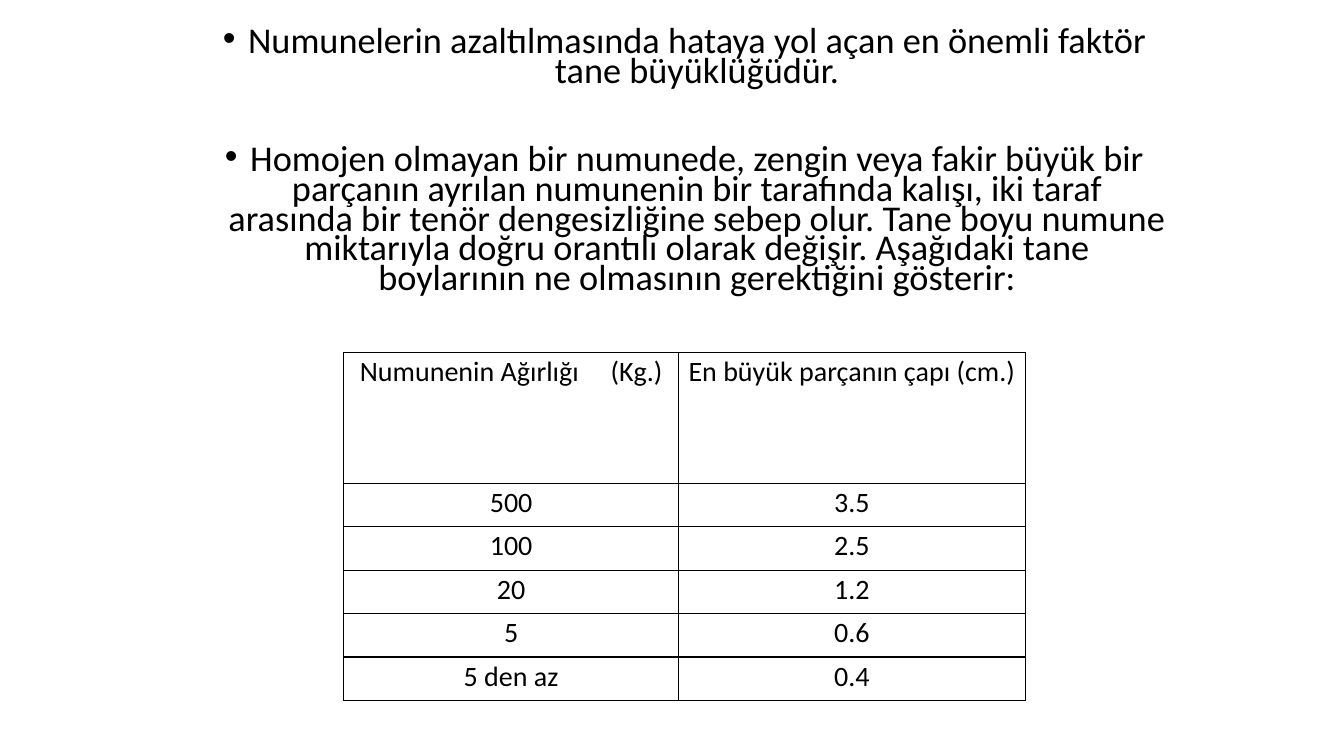
from dataclasses import dataclass

from lxml.etree import SubElement
from pptx import Presentation
from pptx.dml.color import RGBColor
from pptx.enum.text import MSO_ANCHOR, PP_ALIGN
from pptx.oxml.ns import qn
from pptx.util import Inches, Pt


@dataclass(frozen=True)
class Theme:
    font: str = "Calibri"
    ink: str = "000000"
    paper: str = "FFFFFF"
    body_size: float = 25.9
    table_size: float = 20
    border: float = 1


THEME = Theme()

POINTS = [
    "Numunelerin azaltılmasında hataya yol açan en önemli faktör tane büyüklüğüdür.",
    "Homojen olmayan bir numunede, zengin veya fakir büyük bir parçanın ayrılan "
    "numunenin bir tarafında kalışı, iki taraf arasında bir tenör dengesizliğine "
    "sebep olur. Tane boyu numune miktarıyla doğru orantılı olarak değişir. "
    "Aşağıdaki tane boylarının ne olmasının gerektiğini gösterir:",
]
GRAIN_SIZES = [
    ("Numunenin Ağırlığı (Kg.)", "En büyük parçanın çapı (cm.)"),
    ("500", "3.5"),
    ("100", "2.5"),
    ("20", "1.2"),
    ("5", "0.6"),
    ("5 den az", "0.4"),
]


def write(paragraph, text, size, line_spacing=1.0, before=0, tracking=0):
    """Add a centred run of text to a paragraph."""
    paragraph.alignment = PP_ALIGN.CENTER
    paragraph.line_spacing = line_spacing
    paragraph.space_before = Pt(before)
    run = paragraph.add_run()
    run.text = text
    run.font.name = THEME.font
    run.font.size = Pt(size)
    run.font.color.rgb = RGBColor.from_string(THEME.ink)
    if tracking:
        run.font._element.set("spc", str(tracking * 100))


def add_bullet(paragraph, indent):
    props = paragraph._p.get_or_add_pPr()
    props.set("marL", str(indent))
    props.set("indent", str(-indent))
    SubElement(props, qn("a:buFont"), typeface="Arial")
    SubElement(props, qn("a:buChar"), char="•")


def draw_borders(cell):
    props = cell._tc.get_or_add_tcPr()
    for position, side in enumerate(("a:lnL", "a:lnR", "a:lnT", "a:lnB")):
        line = SubElement(props, qn(side), w=str(Pt(THEME.border)))
        fill = SubElement(line, qn("a:solidFill"))
        SubElement(fill, qn("a:srgbClr"), val=THEME.ink)
        props.insert(position, line)  # borders come before the fill


def build_points(slide, left, top, width, height):
    frame = slide.shapes.add_textbox(left, top, width, height).text_frame
    frame.word_wrap = True
    for index, point in enumerate(POINTS):
        paragraph = frame.add_paragraph() if index else frame.paragraphs[0]
        write(paragraph, point, THEME.body_size, line_spacing=0.68,
              before=42 if index else 10)
        add_bullet(paragraph, Inches(0.25))


def build_grain_table(slide, left, top, width, height):
    rows, columns = len(GRAIN_SIZES), len(GRAIN_SIZES[0])
    table = slide.shapes.add_table(rows, columns, left, top, width, height).table
    table.horz_banding = False
    table.first_row = False

    # The header row is three times as tall as a value row
    value_height = height // (rows + 2)
    for index, row in enumerate(table.rows):
        row.height = value_height if index else height - value_height * (rows - 1)
    table.columns[0].width = Inches(3.32)
    table.columns[1].width = width - Inches(3.32)

    for row, values in zip(table.rows, GRAIN_SIZES):
        for cell, value in zip(row.cells, values):
            cell.margin_left = cell.margin_right = Inches(0.07)
            cell.margin_top = cell.margin_bottom = 0
            cell.vertical_anchor = MSO_ANCHOR.TOP
            cell.fill.solid()
            cell.fill.fore_color.rgb = RGBColor.from_string(THEME.paper)
            draw_borders(cell)
            paragraph = cell.text_frame.paragraphs[0]
            label, gap, unit = value.partition(" (Kg.)")
            write(paragraph, label, THEME.table_size, line_spacing=1.07)
            if gap:  # a widened space sets the unit apart
                write(paragraph, " ", THEME.table_size, line_spacing=1.07, tracking=18)
                write(paragraph, gap.strip() + unit, THEME.table_size, line_spacing=1.07)


def main():
    deck = Presentation()
    deck.slide_width, deck.slide_height = Inches(13.33), Inches(7.5)
    slide = deck.slides.add_slide(deck.slide_layouts[6])
    build_points(slide, Inches(1.9), Inches(0.25), Inches(9.78), Inches(3.06))
    build_grain_table(slide, Inches(3.41), Inches(3.5), Inches(6.76), Inches(3.45))
    deck.save("out.pptx")


if __name__ == "__main__":
    main()
